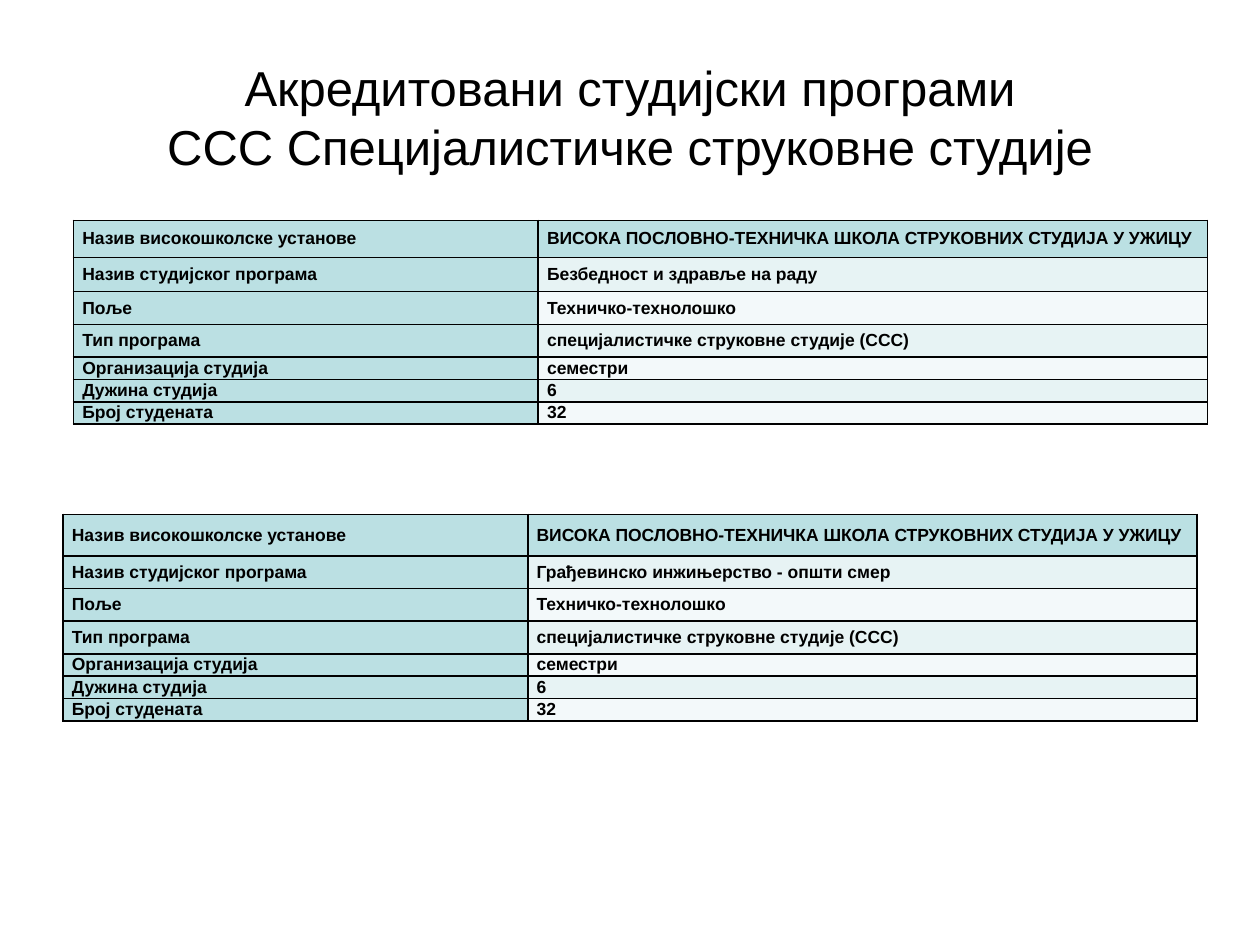
from lxml import etree
from pptx import Presentation, util as u
from pptx.dml.color import RGBColor
from pptx.enum import text
from pptx.oxml.ns import qn

BLACK = RGBColor(0x00, 0x00, 0x00)
TEAL = RGBColor(0xBB, 0xE0, 0xE3)
BANDS = (RGBColor(0xF3, 0xF9, 0xFA), RGBColor(0xE7, 0xF3, 0xF4))

# Content
TITLE = ("Акредитовани студијски програми", "ССС Специјалистичке струковне студије")
LABELS = ("Назив високошколске установе", "Назив студијског програма", "Поље",
          "Тип програма", "Организација студија", "Дужина студија", "Број студената")
SCHOOL = "ВИСОКА ПОСЛОВНО-ТЕХНИЧКА ШКОЛА СТРУКОВНИХ СТУДИЈА У УЖИЦУ"
COMMON = ("Техничко-технолошко", "специјалистичке струковне студије (ССС)",
          "семестри", "6", "32")
PROGRAMS = (
    {"name": "Безбедност и здравље на раду", "left": 1.48, "top": 4.44,
     "first_rows": (0.75, 0.69)},
    {"name": "Грађевинско инжињерство - општи смер", "left": 1.27, "top": 10.37,
     "first_rows": (0.84, 0.65)},
)

# Format
COLUMNS = (9.37, 13.49)
COMMON_ROWS = (0.66, 0.66, 0.45, 0.45, 0.45)
TITLE_FONT = {"name": "Arial", "size": u.Pt(28), "bold": False}
CELL_FONT = {"name": "Arial", "size": u.Pt(10), "bold": True}
TITLE_PLACE = {"left": u.Cm(1.27), "top": u.Cm(0.76),
               "width": u.Cm(22.86), "height": u.Cm(3.18)}
CELL_FORMAT = {"margin_left": u.Cm(0.18), "margin_right": u.Cm(0.18),
               "margin_top": 0, "margin_bottom": 0,
               "vertical_anchor": text.MSO_ANCHOR.MIDDLE}


def apply(target, values):
    for key, value in values.items():
        setattr(target, key, value)


def style_font(font, values):
    apply(font, values)
    font.color.rgb = BLACK


def add_borders(cell):
    props = cell._tc.get_or_add_tcPr()
    for index, side in enumerate(("lnL", "lnR", "lnT", "lnB")):
        line = etree.Element(qn("a:" + side), w=str(u.Pt(1)))
        fill = etree.SubElement(line, qn("a:solidFill"))
        etree.SubElement(fill, qn("a:srgbClr"), val=str(BLACK))
        props.insert(index, line)


def fill_cell(cell, words, color):
    apply(cell, CELL_FORMAT)
    cell.fill.solid()
    cell.fill.fore_color.rgb = color
    add_borders(cell)
    span = cell.text_frame.paragraphs[0].add_run()
    span.text = words
    style_font(span.font, CELL_FONT)


def add_program(page, program):
    values = (SCHOOL, program["name"], *COMMON)
    heights = (*program["first_rows"], *COMMON_ROWS)
    frame = page.shapes.add_table(
        len(LABELS), len(COLUMNS), u.Cm(program["left"]), u.Cm(program["top"]),
        u.Cm(sum(COLUMNS)), u.Cm(sum(heights)))
    table = frame.table
    for column, width in zip(table.columns, COLUMNS):
        column.width = u.Cm(width)
    for row, height in zip(table.rows, heights):
        row.height = u.Cm(height)
    for index, (label, value) in enumerate(zip(LABELS, values)):
        fill_cell(table.cell(index, 0), label, TEAL)
        fill_cell(table.cell(index, 1), value, BANDS[index % 2] if index else TEAL)


def main():
    deck = Presentation()
    deck.slide_width, deck.slide_height = u.Cm(25.4), u.Cm(19.05)
    page = deck.slides.add_slide(deck.slide_layouts[5])

    # Title
    box = page.shapes.title
    apply(box, TITLE_PLACE)
    apply(box.text_frame, {"vertical_anchor": text.MSO_ANCHOR.MIDDLE,
                           "word_wrap": True, "auto_size": text.MSO_AUTO_SIZE.NONE})
    box.text_frame.text = "\v".join(TITLE)
    para = box.text_frame.paragraphs[0]
    para.alignment = text.PP_ALIGN.CENTER
    for span in para.runs:
        style_font(span.font, TITLE_FONT)

    # Program tables
    for program in PROGRAMS:
        add_program(page, program)

    deck.save("out.pptx")


if __name__ == "__main__":
    main()
